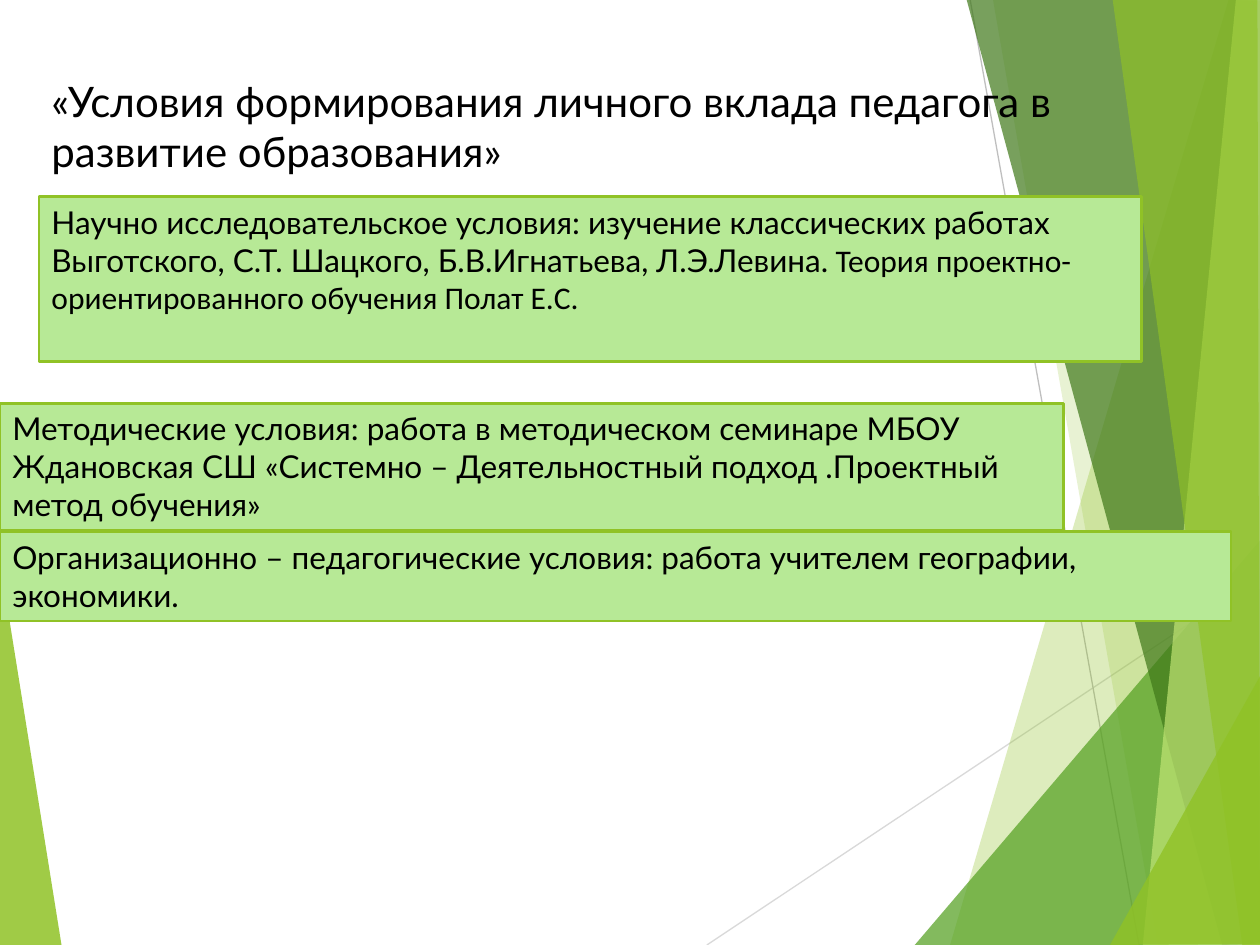
"""Build a slide on the conditions of a teacher's contribution to education."""
from typing import NamedTuple

from lxml import etree
from pptx import Presentation
from pptx.dml.color import RGBColor
from pptx.enum.shapes import MSO_CONNECTOR, MSO_SHAPE
from pptx.enum.text import MSO_ANCHOR, PP_ALIGN
from pptx.oxml.ns import qn
from pptx.util import Inches, Pt

RECT = MSO_SHAPE.RECTANGLE
STRAIGHT = MSO_CONNECTOR.STRAIGHT
TOP = MSO_ANCHOR.TOP
LEFT = PP_ALIGN.LEFT
GREEN, PALE_GREEN, BLACK = "90C226", "B7E996", "000000"
HEAD_FONT, BODY_FONT = "Lato", "Calibri"


class Facet(NamedTuple):
    """A translucent polygon of the background."""
    points: list[tuple[float, float]]
    color: str
    opacity: int


class Ray(NamedTuple):
    """A thin background line."""
    start: tuple[float, float]
    end: tuple[float, float]
    color: str


class Panel(NamedTuple):
    """A text block whose paragraphs are lists of (text, font) runs."""
    box: tuple[float, float, float, float]
    paragraphs: list[list[tuple[str, str]]]


LEFT_FACET = Facet([(-0.01, 4.39), (0.49, 7.51), (-0.01, 7.5)], GREEN, 85)
RAYS = [
    Ray((5.61, 7.5), (10.01, 4.57), "D9D9D9"),
    Ray((7.7, 0), (9.04, 7.5), "BFBFBF"),
]
RIGHT_FACETS = [
    Facet([(9.75, 0), (7.54, 7.5), (10.02, 7.51), (10.01, 0.01)], GREEN, 30),
    Facet([(7.88, -0.01), (9.19, 7.5), (10.01, 7.5), (10.01, -0.01)], GREEN, 20),
    Facet([(7.26, 7.5), (10, 4.29), (10.01, 7.5)], "54A021", 72),
    Facet([(7.67, -0.01), (9.7, 7.5), (10.01, 7.49), (10.01, -0.01)], "3F7819", 70),
    Facet([(9.81, -0.01), (9.07, 7.5), (10.01, 7.5), (10, -0.01)], "C0E474", 70),
    Facet([(8.83, -0.01), (9.86, 7.5), (10, 7.5), (9.98, -0.01)], GREEN, 65),
    Facet([(8.81, 7.5), (10.01, 5.35), (10.01, 7.49)], GREEN, 80),
]
TITLE = Panel((0.31, 0.55, 9.53, 0.91), [[
    ("«Условия формирования личного вклада педагога в развитие образования»", HEAD_FONT)]])
CONDITIONS = [
    Panel((0, 3.2, 8.44, 1.01), [[
        ("Методические условия: работа в методическом семинаре МБОУ Ждановская СШ "
         "«Системно – Деятельностный подход .Проектный метод обучения»", HEAD_FONT)]]),
    Panel((0, 4.22, 9.77, 0.71), [[
        ("Организационно – педагогические условия: работа учителем географии, экономики.",
         HEAD_FONT)]]),
    Panel((0.31, 1.56, 8.75, 1.31), [
        [("Научно исследовательское условия: изучение классических работах", HEAD_FONT)],
        [("Выготского, С.Т. Шацкого, Б.В.Игнатьева, Л.Э.Левина.", HEAD_FONT),
         (" Теория проектно-ориентированного обучения Полат Е.С.", BODY_FONT)]]),
]


def rgb(color: str) -> RGBColor:
    """Turn a hex string into a colour."""
    return RGBColor.from_string(color)


def draw_facet(s, facet: Facet) -> None:
    """Draw a borderless translucent polygon."""
    points = [(Inches(x), Inches(y)) for x, y in facet.points]
    builder = s.shapes.build_freeform(*points[0])
    builder.add_line_segments(points[1:], close=True)
    sp = builder.convert_to_shape()
    sp.shadow.inherit = False
    sp.line.fill.background()
    sp.fill.solid()
    sp.fill.fore_color.rgb = rgb(facet.color)
    clr = sp.fill._xPr.find(qn("a:solidFill"))[0]
    etree.SubElement(clr, qn("a:alpha"), val=str(facet.opacity * 1000))


def draw_ray(s, ray: Ray) -> None:
    """Draw a thin line without a shadow."""
    x1, y1, x2, y2 = (Inches(v) for v in ray.start + ray.end)
    line = s.shapes.add_connector(STRAIGHT, x1, y1, x2, y2)
    line.line.color.rgb = rgb(ray.color)
    line.line.width = Pt(0.75)
    etree.SubElement(line._element.spPr, qn("a:effectLst"))


def write_text(sp, panel: Panel, size: int) -> None:
    """Fill a shape with left-aligned black text."""
    tf = sp.text_frame
    tf.word_wrap = True
    tf.vertical_anchor = TOP
    for i, runs in enumerate(panel.paragraphs):
        p = tf.add_paragraph() if i else tf.paragraphs[0]
        p.alignment = LEFT
        for text, font in runs:
            r = p.add_run()
            r.text = text
            r.font.name = font
            r.font.size = Pt(size)
            r.font.color.rgb = rgb(BLACK)


def draw_title(s, panel: Panel) -> None:
    """Draw the heading as a text box."""
    sp = s.shapes.add_textbox(*(Inches(v) for v in panel.box))
    write_text(sp, panel, 24)


def draw_condition(s, panel: Panel) -> None:
    """Draw a bordered pale green panel."""
    sp = s.shapes.add_shape(RECT, *(Inches(v) for v in panel.box))
    sp.shadow.inherit = False
    sp.fill.solid()
    sp.fill.fore_color.rgb = rgb(PALE_GREEN)
    sp.line.color.rgb = rgb(GREEN)
    sp.line.width = Pt(1.5)
    write_text(sp, panel, 18)


def main() -> None:
    """Build and save the slide."""
    prs = Presentation()
    prs.slide_width, prs.slide_height = Inches(10), Inches(7.5)
    s = prs.slides.add_slide(prs.slide_layouts[6])
    draw_facet(s, LEFT_FACET)
    for ray in RAYS:
        draw_ray(s, ray)
    for facet in RIGHT_FACETS:
        draw_facet(s, facet)
    draw_title(s, TITLE)
    for panel in CONDITIONS:
        draw_condition(s, panel)
    prs.save("out.pptx")


if __name__ == "__main__":
    main()
